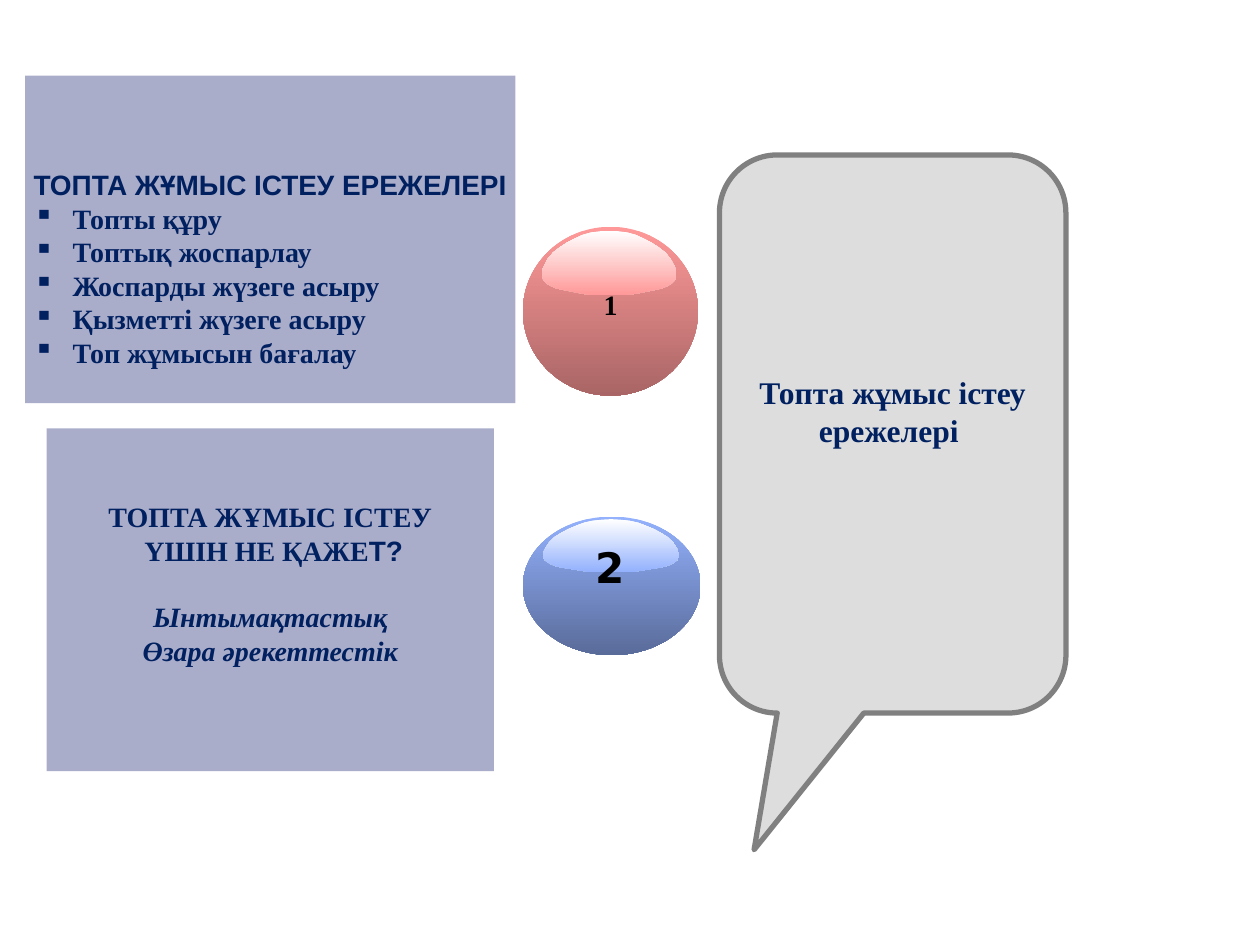
from lxml import etree
from pptx import Presentation
from pptx.dml.color import RGBColor
from pptx.enum.shapes import MSO_SHAPE
from pptx.enum.text import MSO_ANCHOR, PP_ALIGN
from pptx.oxml.ns import qn
from pptx.util import Emu, Inches, Pt

RECTANGLE = MSO_SHAPE.RECTANGLE
OVAL = MSO_SHAPE.OVAL
CALLOUT = MSO_SHAPE.ROUNDED_RECTANGULAR_CALLOUT
MIDDLE = MSO_ANCHOR.MIDDLE
LEFT, CENTER = PP_ALIGN.LEFT, PP_ALIGN.CENTER

NAVY = RGBColor(0x00, 0x20, 0x60)
BLACK = RGBColor(0x00, 0x00, 0x00)
WHITE = RGBColor(0xFF, 0xFF, 0xFF)
LAVENDER = RGBColor(0xAA, 0xAD, 0xCA)
SILVER = RGBColor(0xDD, 0xDD, 0xDD)
GRAY = RGBColor(0x80, 0x80, 0x80)
PINK = RGBColor(0xFF, 0x99, 0x99)
BLUE = RGBColor(0x93, 0xB1, 0xFD)

SERIF, SANS, NUMERAL = "Times New Roman", "Arial", "DejaVu Sans"
INDENT = Inches(0.31)

deck = Presentation()
deck.slide_width = Inches(10)
deck.slide_height = Inches(7.5)
page = deck.slides.add_slide(deck.slide_layouts[6])


def write(para, text, font, size, color=NAVY, italic=None):
    span = para.add_run()
    span.text = text
    span.font.name = font
    span.font.size = Pt(size)
    span.font.bold = True
    span.font.italic = italic
    span.font.color.rgb = color


def shade_down(shape, top, bottom, shade=None):
    shape.shadow.inherit = False
    shape.line.fill.background()
    shape.fill.gradient()
    shape.fill.gradient_angle = 270
    for stop, color in zip(shape.fill.gradient_stops, (top, bottom)):
        stop.color.rgb = color
    if shade:
        last = list(shape._element.iter(qn("a:srgbClr")))[-1]
        etree.SubElement(last, qn("a:shade")).set("val", str(shade))


panels = [
    (RECTANGLE, (0.2, 0.6, 3.89, 2.6), LAVENDER, False, 0.46, 0, [
        (CENTER, False, 0, [("ТОПТА ЖҰМЫС ІСТЕУ ЕРЕЖЕЛЕРІ", SANS, 16)]),
        *[(LEFT, True, 0, [(rule, SERIF, 16)]) for rule in (
            "Топты құру", "Топтық жоспарлау", "Жоспарды жүзеге асыру",
            "Қызметті жүзеге асыру", "Топ жұмысын бағалау")],
    ]),
    (RECTANGLE, (0.37, 3.4, 3.55, 2.72), LAVENDER, False, 0, 0.26, [
        (CENTER, False, 0, [("ТОПТА ЖҰМЫС ІСТЕУ", SERIF, 16)]),
        (CENTER, False, 0, [(" ҮШІН НЕ ҚАЖЕ", SERIF, 16), ("Т?", SANS, 16)]),
        (CENTER, False, 19, [("Ынтымақтастық", SERIF, 16, NAVY, True)]),
        (CENTER, False, 0, [("Өзара әрекеттестік", SERIF, 16, NAVY, True)]),
    ]),
    (CALLOUT, (5.71, 1.23, 2.75, 4.43), SILVER, True, 0, 0.37, [
        (CENTER, False, 0, [("Топта жұмыс істеу ережелері ", SERIF, 18)]),
    ]),
]
for kind, place, color, wrap, push_down, push_up, lines in panels:
    box = page.shapes.add_shape(kind, *map(Inches, place))
    box.shadow.inherit = False
    box.fill.solid()
    box.fill.fore_color.rgb = color
    if kind == CALLOUT:
        box.adjustments[0] = -0.4
        box.adjustments[1] = 0.745
        box.adjustments[2] = 0.167
        box.line.color.rgb = GRAY
        box.line.width = Pt(3)
    else:
        box.line.fill.background()
    frame = box.text_frame
    frame.word_wrap = wrap
    frame.vertical_anchor = MIDDLE
    frame.margin_top = Inches(0.05 + push_down)
    frame.margin_bottom = Inches(0.05 + push_up)
    for number, (align, bullet, gap, spans) in enumerate(lines):
        para = frame.add_paragraph() if number else frame.paragraphs[0]
        para.alignment = align
        if gap:
            para.space_before = Pt(gap)
        if bullet:
            layout = para._p.get_or_add_pPr()
            layout.set("marL", str(INDENT))
            layout.set("indent", str(-INDENT))
            etree.SubElement(layout, qn("a:buChar")).set("char", "▪")
        for span in spans:
            write(para, *span)

gloss_half = [
    (0, 0), (0.13, 0.01), (0.27, 0.03), (0.4, 0.07), (0.52, 0.13),
    (0.63, 0.19), (0.73, 0.26), (0.83, 0.34), (0.91, 0.44), (0.97, 0.56),
    (1, 0.64), (1, 0.72), (0.97, 0.78), (0.93, 0.82), (0.87, 0.86),
    (0.81, 0.89), (0.74, 0.91), (0.65, 0.93), (0.55, 0.95), (0.46, 0.97),
    (0.35, 0.99), (0.24, 1),
]
gloss = gloss_half + [(-x, y) for x, y in reversed(gloss_half[1:])]

balls = [
    ((4.15, 4.1, 1.41, 1.1), (4.31, 4.12, 1.08, 0.42), BLUE, 31765,
     (4.58, 4.25, 0.52, 0.5), ("2", NUMERAL, 24, BLACK)),
    ((4.15, 1.8, 1.39, 1.34), (4.3, 1.83, 1.07, 0.51), PINK, 39216,
     (4.69, 2.23, 0.31, 0.37), ("1", SERIF, 16, BLACK)),
]
for ball_place, gloss_place, color, shade, label_place, label in balls:
    group = page.shapes.add_group_shape()
    ball = group.shapes.add_shape(OVAL, *map(Inches, ball_place))
    shade_down(ball, color, color, shade)

    left, top, width, height = map(Inches, gloss_place)
    outline = [(Emu(int(left + width * (1 + x) / 2)), Emu(int(top + height * y)))
               for x, y in gloss]
    builder = group.shapes.build_freeform(*outline[0])
    builder.add_line_segments(outline[1:], close=True)
    shade_down(builder.convert_to_shape(), WHITE, color)

    text_box = group.shapes.add_textbox(*map(Inches, label_place))
    text_box.text_frame.word_wrap = False
    para = text_box.text_frame.paragraphs[0]
    para.alignment = CENTER
    write(para, *label)

deck.save("out.pptx")
